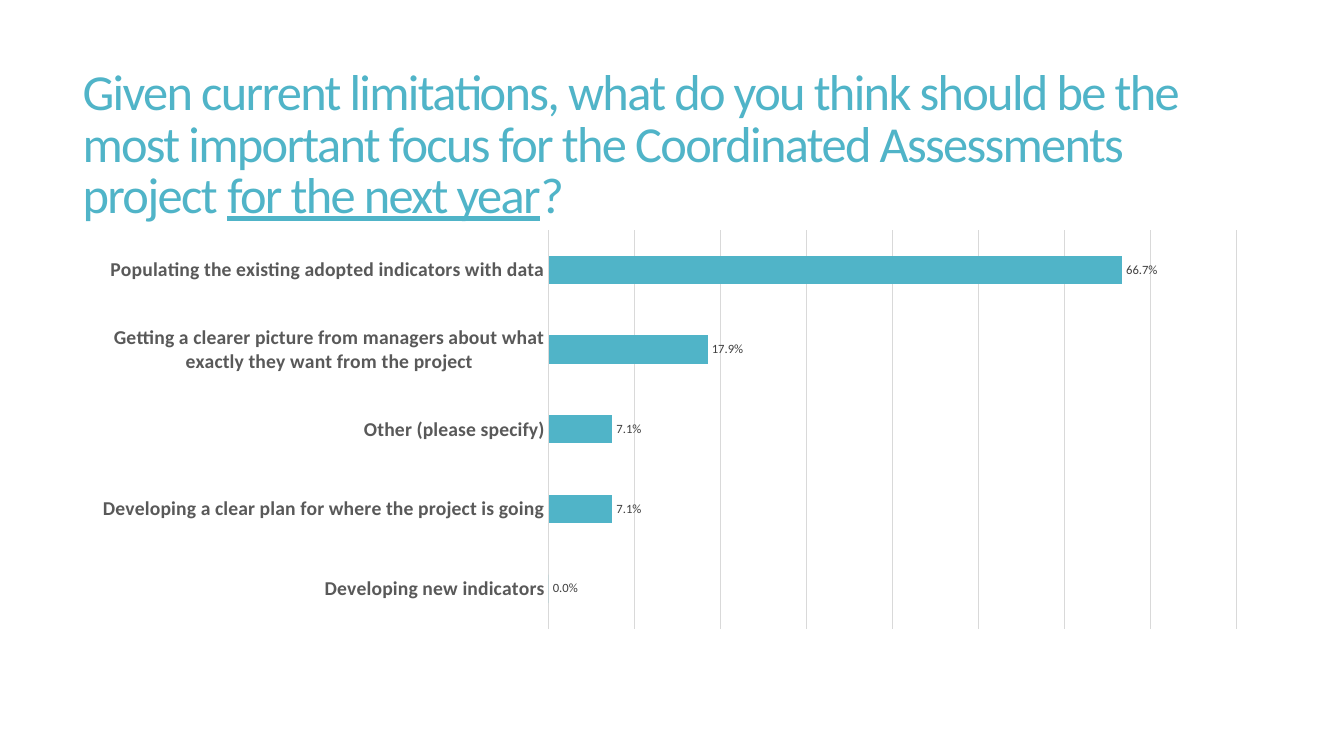
import pptx
import pptx.chart.data
import pptx.dml.color
import pptx.enum.chart
import pptx.enum.text
import pptx.oxml
import pptx.oxml.ns
import pptx.util
from dataclasses import dataclass

TITLE = [
    ("Given current limitations, what do you think should be the most important "
     "focus for the Coordinated Assessments project ", False),
    ("for the next year", True),
    ("?", False),
]
ANSWERS = [
    ("Developing new indicators", 0, None),
    ("Developing a clear plan for where the project is going", 0.074, "7.1%"),
    ("Other (please specify)", 0.074, "7.1%"),
    ("Getting a clearer picture from managers about what exactly they want from the project",
     0.185, "17.9%"),
    ("Populating the existing adopted indicators with data", 0.667, None),
]
SLIDE = (13.33, 7.5)
TITLE_BOX = (0.72, 0.55, 11.78, 1.81)
CHART_BOX = (0.74, 2.2, 11.76, 4.12)
PLOT_SHARE = {"x": 0.4, "y": 0.02, "w": 0.58, "h": 0.96}


@dataclass(frozen=True)
class Theme:
    font: str = "Calibri"
    accent: str = "50B4C8"
    grid: str = "D9D9D9"
    category: str = "595959"
    label: str = "404040"
    text: str = "000000"
    title_size: int = 36
    category_size: int = 14
    chart_size: int = 10
    label_size: int = 9


THEME = Theme()


def rgb(value):
    return pptx.dml.color.RGBColor.from_string(value)


def inches(box):
    return [pptx.util.Inches(v) for v in box]


def set_font(font, size, color, bold=False):
    font.name = THEME.font
    font.size = pptx.util.Pt(size)
    font.bold = bold
    font.color.rgb = rgb(color)


def set_line(line):
    line.color.rgb = rgb(THEME.grid)
    line.width = pptx.util.Pt(0.75)


def add_title(slide):
    tf = slide.shapes.add_textbox(*inches(TITLE_BOX)).text_frame
    tf.word_wrap = True
    tf.vertical_anchor = pptx.enum.text.MSO_ANCHOR.MIDDLE
    p = tf.paragraphs[0]
    p.line_spacing = 0.85
    set_font(p.font, THEME.title_size, THEME.accent)
    for text, underlined in TITLE:
        r = p.add_run()
        r.text = text
        if underlined:
            r.font.underline = True
        r.font._element.set("spc", "-120")


def place_plot(chart):
    plot_area = chart._chartSpace.chart.plotArea
    for old in plot_area.findall(pptx.oxml.ns.qn("c:layout")):
        plot_area.remove(old)
    modes = '<c:xMode val="edge"/><c:yMode val="edge"/>'
    sides = "".join(f'<c:{k} val="{v}"/>' for k, v in PLOT_SHARE.items())
    plot_area.insert(0, pptx.oxml.parse_xml(
        f'<c:layout {pptx.oxml.ns.nsdecls("c")}><c:manualLayout>'
        f'<c:layoutTarget val="inner"/>{modes}{sides}</c:manualLayout></c:layout>'))


def add_answers(slide):
    data = pptx.chart.data.CategoryChartData(number_format="0.0%")
    data.categories = [name for name, _, _ in ANSWERS]
    data.add_series("Series 1", [value for _, value, _ in ANSWERS])
    chart = slide.shapes.add_chart(
        pptx.enum.chart.XL_CHART_TYPE.BAR_CLUSTERED, *inches(CHART_BOX), data).chart
    chart.has_legend = False
    chart.has_title = False
    set_font(chart.font, THEME.chart_size, THEME.text)
    place_plot(chart)

    cat = chart.category_axis
    cat.major_tick_mark = pptx.enum.chart.XL_TICK_MARK.NONE
    set_font(cat.tick_labels.font, THEME.category_size, THEME.category, True)
    set_line(cat.format.line)

    val = chart.value_axis
    val.minimum_scale, val.maximum_scale, val.major_unit = 0, 0.8, 0.1
    val.tick_labels.number_format = "0.0%"
    val.tick_labels.number_format_is_linked = False
    val.visible = False
    set_line(val.major_gridlines.format.line)

    plot = chart.plots[0]
    plot.gap_width = 182
    plot.vary_by_categories = False
    series = plot.series[0]
    series.format.fill.solid()
    series.format.fill.fore_color.rgb = rgb(THEME.accent)
    outside = pptx.enum.chart.XL_LABEL_POSITION.OUTSIDE_END
    labels = series.data_labels
    labels.show_value = True
    labels.number_format = "0.0%"
    labels.number_format_is_linked = False
    labels.position = outside
    set_font(labels.font, THEME.label_size, THEME.label)
    for i, (_, _, text) in enumerate(ANSWERS):
        if text:
            label = series.points[i].data_label
            p = label.text_frame.paragraphs[0]
            r = p.add_run()
            r.text = text
            set_font(r.font, THEME.label_size, THEME.label)
            label.position = outside


def main():
    prs = pptx.Presentation()
    prs.slide_width, prs.slide_height = inches(SLIDE)
    slide = prs.slides.add_slide(prs.slide_layouts[6])
    add_title(slide)
    add_answers(slide)
    prs.save("out.pptx")


if __name__ == "__main__":
    main()
